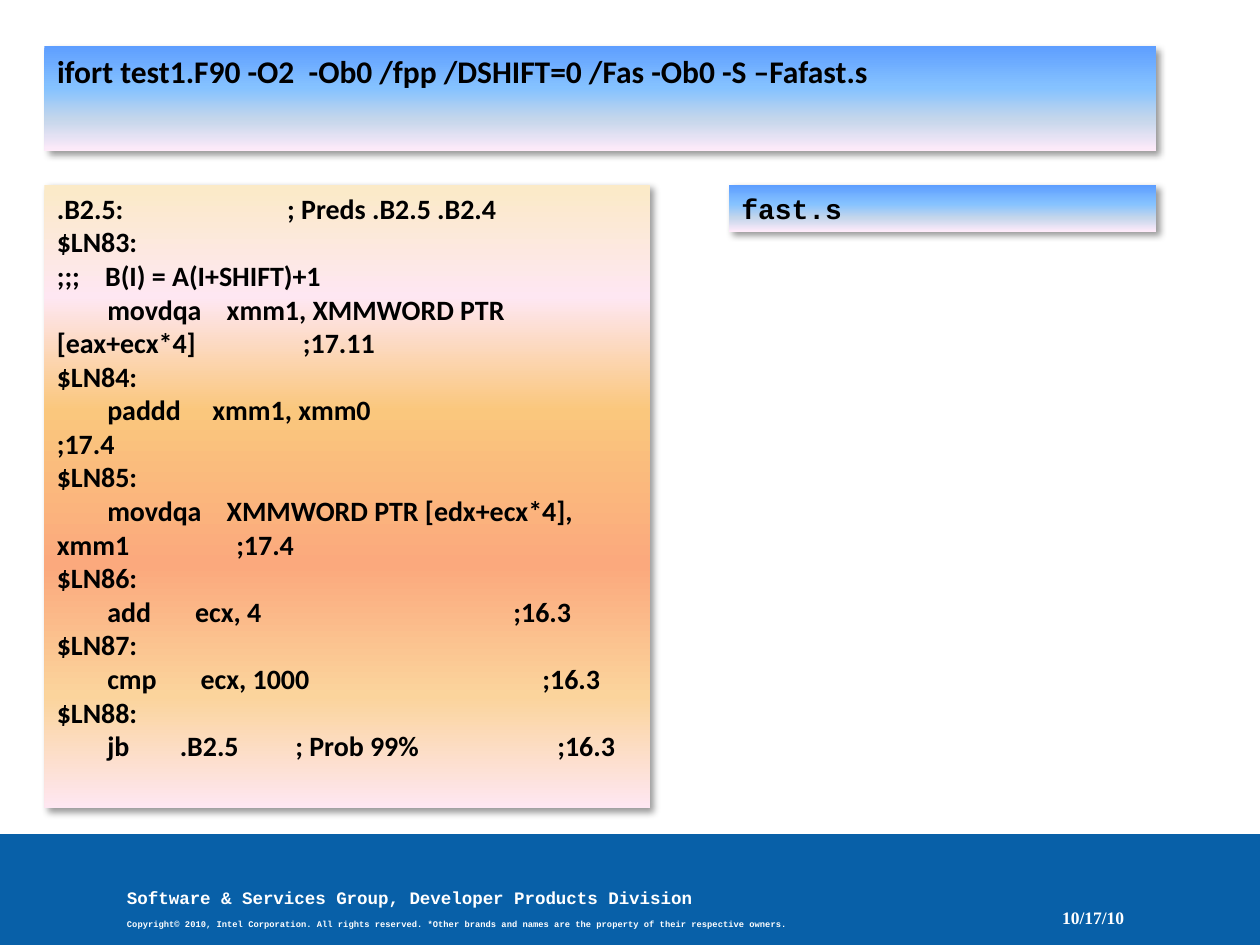
from lxml import etree
from pptx import Presentation
from pptx.dml.color import RGBColor
from pptx.enum.shapes import MSO_SHAPE
from pptx.enum.text import MSO_ANCHOR, MSO_AUTO_SIZE, PP_ALIGN
from pptx.oxml import parse_xml
from pptx.oxml.ns import nsdecls, qn
from pptx.util import Pt

RECT = MSO_SHAPE.RECTANGLE
TOP, MIDDLE = MSO_ANCHOR.TOP, MSO_ANCHOR.MIDDLE
LEFT, RIGHT = PP_ALIGN.LEFT, PP_ALIGN.RIGHT
GROW, FIXED = MSO_AUTO_SIZE.SHAPE_TO_FIT_TEXT, MSO_AUTO_SIZE.NONE

# Content
COMMAND = "ifort test1.F90 -O2  -Ob0 /fpp /DSHIFT=0 /Fas -Ob0 -S –Fafast.s"
FILE = "fast.s"
CODE = [
    ".B2.5:                          ; Preds .B2.5 .B2.4",
    "$LN83:",
    ";;;    B(I) = A(I+SHIFT)+1",
    "        movdqa    xmm1, XMMWORD PTR [eax+ecx*4]                 ;17.11",
    "$LN84:",
    "        paddd     xmm1, xmm0                                    ;17.4",
    "$LN85:",
    "        movdqa    XMMWORD PTR [edx+ecx*4], xmm1                 ;17.4",
    "$LN86:",
    "        add       ecx, 4                                        ;16.3",
    "$LN87:",
    "        cmp       ecx, 1000                                     ;16.3",
    "$LN88:",
    "        jb        .B2.5         ; Prob 99%                      ;16.3",
]
GROUP = "Software & Services Group, Developer Products Division"
RIGHTS = ("Copyright© 2010, Intel Corporation. All rights reserved. "
          "*Other brands and names are the property of their respective owners.")
DATE = "10/17/10"

THEME = {
    "ink": "000000", "paper": "FFFFFF", "band": "0860A8",
    "sans": "Calibri", "mono": "Courier New", "serif": "Times New Roman",
    "head": 18, "body": 16, "foot": 10, "fine": 5,
    "sky": [(0, "5E9EFF"), (40, "85C2FF"), (70, "C4D6EB"), (100, "FFEBFA")],
    "dawn": [(0, "FBEAC7"), (18, "FEE7F2"), (36, "FAC77D"),
             (61, "FBA97D"), (82, "FBD49C"), (100, "FEE7F2")],
}

# Layout
WIDE, HIGH = 720, 540
EDGE, END = 25.4, 660.5
ROW = 105.8
SIDE = 416.6
BAND = 476.6


def place(shape, left, top, width, height):
    shape.left, shape.top = Pt(left), Pt(top)
    shape.width, shape.height = Pt(width), Pt(height)


def write(shape, lines, face, sizes, color, align=LEFT, anchor=TOP,
          fit=GROW, spacing=None, wrap=True):
    frame = shape.text_frame
    frame.text = "\n".join(lines)
    frame.word_wrap, frame.auto_size = wrap, fit
    frame.vertical_anchor = anchor
    for i, para in enumerate(frame.paragraphs):
        para.alignment = align
        if spacing:
            para.line_spacing = spacing[i]
        font = para.font
        font.name, font.size, font.bold = THEME[face], Pt(THEME[sizes[i]]), True
        font.color.rgb = RGBColor.from_string(THEME[color])


def shade(shape, name):
    """Vertical gradient, no outline, soft shadow to the lower right."""
    shape.fill.gradient()
    shape.fill.gradient_angle = 270
    props = shape._element.spPr
    stops = props.find(".//" + qn("a:gsLst"))
    for stop in list(stops):
        stops.remove(stop)
    for pos, color in THEME[name]:
        stop = etree.SubElement(stops, qn("a:gs"), pos=str(pos * 1000))
        etree.SubElement(stop, qn("a:srgbClr"), val=color)
    shape.line.fill.background()
    shape.shadow.inherit = False
    props.find(qn("a:effectLst")).append(parse_xml(
        f'<a:outerShdw {nsdecls("a")} blurRad="{Pt(4)}" dist="{Pt(3)}" '
        'dir="2700000" algn="tl" rotWithShape="0">'
        f'<a:srgbClr val="{THEME["ink"]}"><a:alpha val="40000"/></a:srgbClr>'
        '</a:outerShdw>'))


def main():
    deck = Presentation()
    deck.slide_width, deck.slide_height = Pt(WIDE), Pt(HIGH)
    slide = deck.slides.add_slide(deck.slide_layouts[5])
    shapes = slide.shapes

    # Footer band
    band = shapes.add_shape(RECT, 0, Pt(BAND), Pt(WIDE), Pt(HIGH - BAND))
    band.fill.solid()
    band.fill.fore_color.rgb = RGBColor.from_string(THEME["band"])
    band.line.fill.background()
    band.shadow.inherit = False

    # Footer text
    foot = shapes.add_textbox(Pt(65.5), Pt(501.1), Pt(369.4), Pt(32.4))
    write(foot, [GROUP, RIGHTS], "mono", ["foot", "fine"], "paper",
          fit=FIXED, spacing=[1.2, 1.5], wrap=False)
    foot.text_frame.paragraphs[1].space_before = Pt(3.1)
    date = shapes.add_textbox(Pt(562.3), Pt(511.2), Pt(87.1), Pt(28.8))
    write(date, [DATE], "serif", ["foot"], "paper", RIGHT, MIDDLE, FIXED, [0.8])

    # Command line, code listing and file name
    title = shapes.title
    code = shapes.add_shape(RECT, 0, 0, 0, 0)
    label = shapes.add_shape(RECT, 0, 0, 0, 0)
    for shape, spot, fill, lines, face, size in [
        (title, (EDGE, 26.1, END - EDGE, 29.1), "sky", [COMMAND], "sans", "head"),
        (code, (EDGE, ROW, 346.2, 356.2), "dawn", CODE, "sans", "body"),
        (label, (SIDE, ROW, END - SIDE, 26.7), "sky", [FILE], "mono", "body"),
    ]:
        place(shape, *spot)
        shade(shape, fill)
        write(shape, lines, face, [size] * len(lines), "ink")

    deck.save("out.pptx")


if __name__ == "__main__":
    main()
